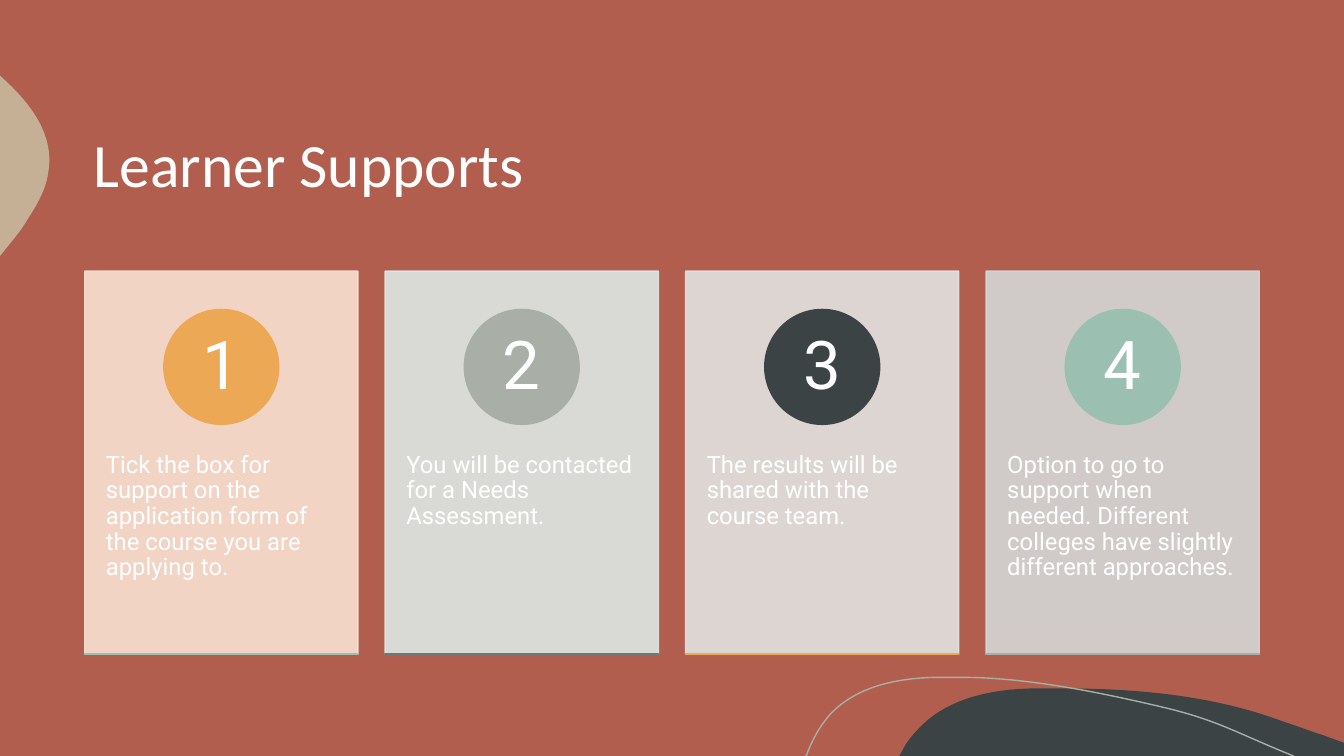
from dataclasses import dataclass
from typing import Any

from lxml import etree
from pptx import Presentation
from pptx import util as u
from pptx.dml.color import RGBColor
from pptx.enum import shapes, text
from pptx.oxml.ns import qn

Point = tuple[float, float]
Box = tuple[float, float, float, float]


@dataclass(frozen=True)
class Theme:
    background: str = "B15E4E"
    white: str = "FFFFFF"
    dark: str = "3B4345"
    sand: str = "C5B096"
    grey: str = "A9AEA7"
    slate: str = "6A787C"
    orange: str = "ECA855"
    green: str = "9BBFB0"
    title_font: str = "Calibri"
    body_font: str = "Roboto"
    title_size: int = 44
    number_size: int = 48
    body_size: int = 17
    card_opacity: int = 90


@dataclass(frozen=True)
class Card:
    body: str
    panel: str
    badge: str
    rule: str


@dataclass(frozen=True)
class Blob:
    start: Point
    pieces: tuple[tuple[Point, ...], ...]
    color: str
    filled: bool = True


T = Theme()
CARD_LEFT, CARD_TOP, CARD_W, CARD_H, CARD_PITCH = 0.84, 2.69, 2.71, 3.8, 2.98
BADGE, NUMBER = 1.14, 0.81

CARDS = (
    Card("Tick the box for support on the application form of the course you are applying to.",
         "F8E1D1", T.orange, T.green),
    Card("You will be contacted for a Needs Assessment.", "DEE8E4", T.grey, T.slate),
    Card("The results will be shared with the course team.", "E2E3E1", T.dark, T.orange),
    Card("Option to go to support when needed. Different colleges have slightly different approaches.",
         "D4D6D7", T.green, T.grey),
)

BLOBS = (
    Blob((10.54, 6.83), (
        ((11.28, 6.83), (12.04, 6.9), (12.73, 7.16)),
        ((12.86, 7.2), (12.98, 7.25), (13.11, 7.29)),
        ((13.33, 7.37),), ((13.33, 7.5),), ((8.92, 7.5),), ((8.98, 7.39),),
        ((9.02, 7.33), (9.06, 7.28), (9.11, 7.23)),
        ((9.39, 6.93), (9.82, 6.84), (10.23, 6.83)),
        ((10.33, 6.83), (10.43, 6.83), (10.54, 6.83)),
    ), T.dark),
    Blob((0, 0.75), (
        ((0.01, 0.76),),
        ((0.3, 1.02), (0.54, 1.33), (0.48, 1.7)),
        ((0.46, 1.87), (0.37, 2.03), (0.27, 2.18)),
        ((0.24, 2.24), (0.17, 2.33), (0.08, 2.44)),
        ((0, 2.54),),
    ), T.sand),
    Blob((7.99, 7.5), (
        ((8, 7.49),),
        ((8.06, 7.33), (8.14, 7.19), (8.24, 7.08)),
        ((8.5, 6.81), (8.89, 6.73), (9.26, 6.72)),
        ((9.55, 6.72),),
        ((10.22, 6.72), (11, 6.89), (11.55, 7.02)),
        ((12.09, 7.15), (12.26, 7.27), (12.83, 7.5)),
    ), T.grey, False),
)


def set_all(target: Any, values: dict[str, Any]) -> None:
    for name, value in values.items():
        setattr(target, name, value)


def inches(values: tuple[float, ...]) -> list[int]:
    return [u.Inches(v) for v in values]


def paint(fill: Any, color: str, opacity: int = 100) -> None:
    fill.solid()
    fill.fore_color.rgb = RGBColor.from_string(color)
    if opacity < 100:
        for clr in fill._xPr.find(qn("a:solidFill")):
            etree.SubElement(clr, qn("a:alpha"), val=str(opacity * 1000))


def style(sp: Any, color: str, opacity: int = 100) -> None:
    sp.shadow.inherit = False
    paint(sp.fill, color, opacity)
    paint(sp.line.fill, color, opacity)
    sp.line.width = u.Pt(1)


def draw_blob(s: Any, blob: Blob) -> None:
    fb = s.shapes.build_freeform(*inches(blob.start), scale=1.0)
    fb.add_line_segments([tuple(inches(piece[-1])) for piece in blob.pieces], close=blob.filled)
    sp = fb.convert_to_shape()
    for segment, piece in zip(list(sp._element.iter(qn("a:lnTo"))), blob.pieces):
        if len(piece) == 3:
            curve = etree.Element(qn("a:cubicBezTo"))
            for x, y in map(inches, piece):
                etree.SubElement(curve, qn("a:pt"), x=str(x - sp.left), y=str(y - sp.top))
            segment.getparent().replace(segment, curve)
    style(sp, blob.color)
    (sp.line.fill if blob.filled else sp.fill).background()


def write(sp: Any, words: str, font: str, size: int, frame: dict[str, Any], align: Any) -> None:
    tf = sp.text_frame
    set_all(tf, {"word_wrap": True, "auto_size": text.MSO_AUTO_SIZE.NONE, **frame})
    p = tf.paragraphs[0]
    set_all(p, {"line_spacing": 0.9, "alignment": align})
    r = p.add_run()
    r.text = words
    set_all(r.font, {"name": font, "size": u.Pt(size)})
    r.font.color.rgb = RGBColor.from_string(T.white)


def margins(x: float, y: float) -> dict[str, Any]:
    return {"margin_left": u.Inches(x), "margin_right": u.Inches(x),
            "margin_top": u.Inches(y), "margin_bottom": u.Inches(y)}


def add_shape(group: Any, kind: Any, box: Box, color: str, opacity: int = 100) -> None:
    style(group.shapes.add_shape(kind, *inches(box)), color, opacity)


def draw_card(s: Any, index: int, card: Card) -> None:
    kind = shapes.MSO_SHAPE
    group = s.shapes.add_group_shape()
    left = CARD_LEFT + index * CARD_PITCH
    center = left + CARD_W / 2
    add_shape(group, kind.RECTANGLE, (left, CARD_TOP, CARD_W, CARD_H), card.panel, T.card_opacity)
    sp = group.shapes.add_textbox(*inches((left, 4.13, CARD_W, 2.28)))
    write(sp, card.body, T.body_font, T.body_size, margins(0.21, 0.36), text.PP_ALIGN.LEFT)
    add_shape(group, kind.OVAL, (center - BADGE / 2, 3.07, BADGE, BADGE), card.badge)
    sp = group.shapes.add_textbox(*inches((center - NUMBER / 2, 3.24, NUMBER, NUMBER)))
    frame = {**margins(0.09, 0.01), "vertical_anchor": text.MSO_ANCHOR.MIDDLE}
    write(sp, str(index + 1), T.body_font, T.number_size, frame, text.PP_ALIGN.CENTER)
    add_shape(group, kind.RECTANGLE, (left, CARD_TOP + CARD_H, CARD_W, 0), card.rule)


def main() -> None:
    prs = Presentation()
    set_all(prs, {"slide_width": u.Inches(13.33), "slide_height": u.Inches(7.5)})
    s = prs.slides.add_slide(prs.slide_layouts[5])
    paint(s.background.fill, T.background)
    for blob in BLOBS:
        draw_blob(s, blob)
    title = s.shapes.title
    s.shapes._spTree.append(title._element)
    set_all(title, dict(zip(("left", "top", "width", "height"),
                            inches((0.83, 0.83, 11.67, 1.67)))))
    write(title, "Learner Supports", T.title_font, T.title_size,
          {"vertical_anchor": text.MSO_ANCHOR.MIDDLE}, text.PP_ALIGN.LEFT)
    for index, card in enumerate(CARDS):
        draw_card(s, index, card)
    prs.save("out.pptx")


if __name__ == "__main__":
    main()
